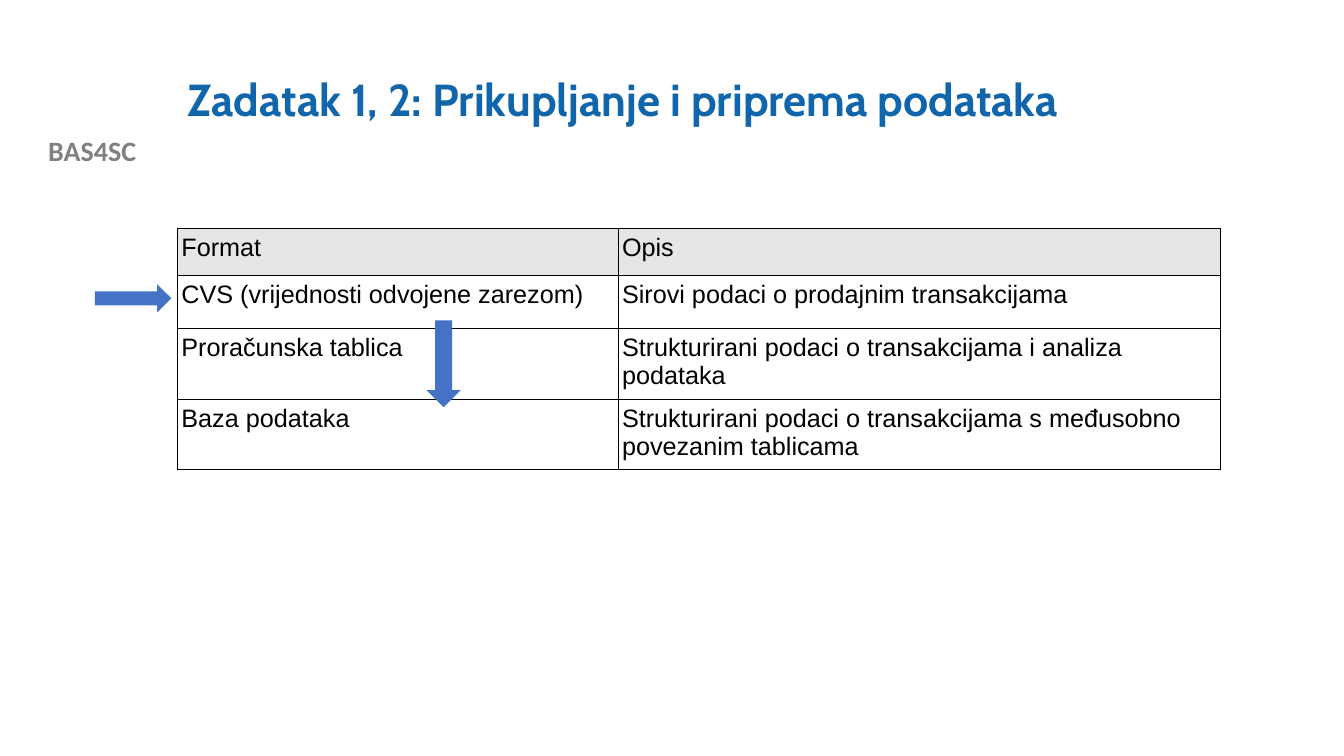
import pptx
import pptx.util
import pptx.dml.color
import pptx.enum.shapes
import pptx.enum.text
import pptx.oxml
import pptx.oxml.ns
from pptx.util import Inches

RGBColor = pptx.dml.color.RGBColor
MSO_SHAPE = pptx.enum.shapes.MSO_SHAPE
PP_ALIGN = pptx.enum.text.PP_ALIGN
MSO_ANCHOR = pptx.enum.text.MSO_ANCHOR

TITLE_BLUE = RGBColor(0x10, 0x65, 0xAB)
ARROW_BLUE = RGBColor(0x44, 0x72, 0xC4)
LABEL_GRAY = RGBColor(0x80, 0x80, 0x80)
HEADER_GRAY = RGBColor(0xE7, 0xE6, 0xE6)
BLACK = RGBColor(0, 0, 0)

ROWS = [
    ("Format", "Opis"),
    ("CVS (vrijednosti odvojene zarezom)", "Sirovi podaci o prodajnim transakcijama"),
    ("Proračunska tablica", "Strukturirani podaci o transakcijama i analiza podataka"),
    ("Baza podataka",
     "Strukturirani podaci o transakcijama s međusobno povezanim tablicama"),
]


class SlideBuilder:
    def __init__(self, prs):
        self.s = prs.slides.add_slide(prs.slide_layouts[5])

    def add_text(self, tf, text, font, size, color, bold=False, align=PP_ALIGN.LEFT):
        p = tf.paragraphs[0]
        p.alignment = align
        r = p.add_run()
        r.text = text
        r.font.name = font
        r.font.size = pptx.util.Pt(size)
        r.font.bold = bold
        r.font.color.rgb = color
        return p

    def title(self, text, x, y, w, h):
        sp = self.s.shapes.title
        sp.left, sp.top, sp.width, sp.height = map(Inches, (x, y, w, h))
        tf = sp.text_frame
        tf.word_wrap = True
        tf.auto_size = pptx.enum.text.MSO_AUTO_SIZE.NONE
        tf.vertical_anchor = MSO_ANCHOR.MIDDLE
        p = self.add_text(tf, text, "Cabin", 32, TITLE_BLUE, bold=True)
        p.line_spacing = 0.9

    def label(self, text, x, y, w, h):
        sp = self.s.shapes.add_textbox(*map(Inches, (x, y, w, h)))
        sp.text_frame.word_wrap = True
        self.add_text(sp.text_frame, text, "Calibri", 20, LABEL_GRAY,
                      bold=True, align=PP_ALIGN.CENTER)

    def border(self, cell):
        tc_pr = cell._tc.get_or_add_tcPr()
        for i, side in enumerate(("lnL", "lnR", "lnT", "lnB")):
            tc_pr.insert(i, pptx.oxml.parse_xml(
                f'<a:{side} {pptx.oxml.ns.nsdecls("a")} w="7200"><a:solidFill>'
                f'<a:srgbClr val="{BLACK}"/></a:solidFill></a:{side}>'))

    def table(self, rows, x, y, widths, heights):
        frame = self.s.shapes.add_table(
            len(rows), len(widths), Inches(x), Inches(y),
            Inches(sum(widths)), Inches(sum(heights)))
        table = frame.table
        table.horz_banding = False
        for column, width in zip(table.columns, widths):
            column.width = Inches(width)
        for i, (row, height) in enumerate(zip(rows, heights)):
            table.rows[i].height = Inches(height)
            for j, text in enumerate(row):
                cell = table.cell(i, j)
                cell.margin_left = cell.margin_right = Inches(0.04)
                cell.margin_top = cell.margin_bottom = Inches(0.05)
                if i == 0:
                    cell.fill.solid()
                    cell.fill.fore_color.rgb = HEADER_GRAY
                else:
                    cell.fill.background()
                self.border(cell)
                self.add_text(cell.text_frame, text, "Arial", 18, BLACK)

    def arrow(self, kind, x, y, w, h):
        sp = self.s.shapes.add_shape(kind, *map(Inches, (x, y, w, h)))
        sp.shadow.inherit = False
        sp.fill.solid()
        sp.fill.fore_color.rgb = ARROW_BLUE
        sp.line.fill.background()


def main():
    prs = pptx.Presentation()
    prs.slide_width, prs.slide_height = Inches(13.33), Inches(7.5)
    slide = SlideBuilder(prs)

    # Heading and project label
    slide.title("Zadatak 1, 2: Prikupljanje i priprema podataka", 1.76, 0.4, 10.66, 1.22)
    slide.label("BAS4SC", 0, 1.28, 1.83, 0.43)

    # Data formats
    slide.table(ROWS, 1.76, 2.27, (4.37, 5.97), (0.46, 0.53, 0.66, 0.66))

    # Arrows: starting format and order of work
    slide.arrow(MSO_SHAPE.RIGHT_ARROW, 0.94, 2.82, 0.76, 0.28)
    slide.arrow(MSO_SHAPE.DOWN_ARROW, 4.23, 3.18, 0.34, 0.86)

    prs.save("out.pptx")


if __name__ == "__main__":
    main()
